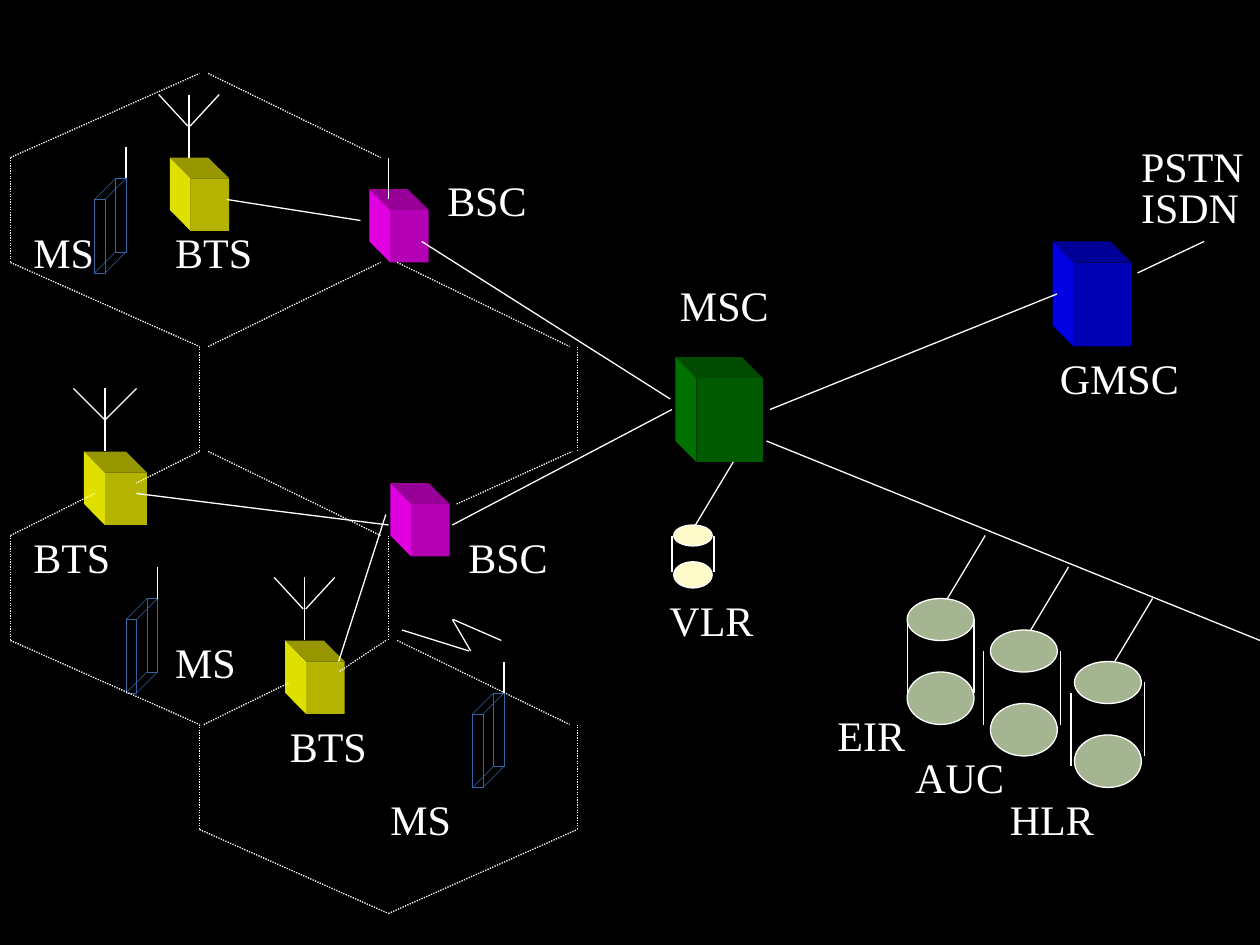
from lxml.etree import SubElement
from pptx import Presentation
from pptx.dml.color import RGBColor
from pptx.enum.dml import MSO_LINE
from pptx.enum.shapes import MSO_CONNECTOR, MSO_SHAPE
from pptx.oxml.ns import qn
from pptx.util import Pt

COLORS = {
    "background": "000000", "white": "FFFFFF", "wire": "3465A4",
    "register": "A5B592", "visitor": "FEFAC9",
}
CUBE_COLORS = {
    "MSC": ("005A00", "007000", "004B00"),
    "GMSC": ("0000B4", "0000E0", "000096"),
    "BSC": ("B400B4", "E000E0", "960096"),
    "BTS": ("B4B400", "E0E000", "969600"),
}
DEPTH = 12

presentation = Presentation()
presentation.slide_width = Pt(720)
presentation.slide_height = Pt(540)
slide = presentation.slides.add_slide(presentation.slide_layouts[6])
slide.background.fill.solid()
slide.background.fill.fore_color.rgb = RGBColor.from_string(COLORS["background"])


def add_line(x1, y1, x2, y2, dotted=False, color="white", width=0.75):
    connector = slide.shapes.add_connector(
        MSO_CONNECTOR.STRAIGHT, Pt(x1), Pt(y1), Pt(x2), Pt(y2))
    connector.line.color.rgb = RGBColor.from_string(COLORS[color])
    connector.line.width = Pt(width)
    if dotted:
        connector.line.dash_style = MSO_LINE.ROUND_DOT
    SubElement(connector._element.spPr, qn("a:effectLst"))


def paint(shape, fill=None, line=None, width=0.75):
    shape.shadow.inherit = False
    if fill:
        shape.fill.solid()
        shape.fill.fore_color.rgb = RGBColor.from_string(fill)
    else:
        shape.fill.background()
    if line:
        shape.line.color.rgb = RGBColor.from_string(line)
        shape.line.width = Pt(width)
    else:
        shape.line.fill.background()


cubes = [
    ("MSC", 398, 216, 38, 48),
    ("GMSC", 613.5, 150, 33, 48),
    ("BSC", 223, 120, 22, 30),
    ("BTS", 109, 102, 22, 30),
    ("BSC", 235, 288, 22, 30),
    ("BTS", 175, 378, 22, 30),
    ("BTS", 60, 270, 24, 30),
]
for kind, x, y, width, height in cubes:
    front_color, side_color, top_color = CUBE_COLORS[kind]
    front = slide.shapes.add_shape(
        MSO_SHAPE.RECTANGLE, Pt(x), Pt(y), Pt(width), Pt(height))
    paint(front, front_color)
    back_x, back_y = x - DEPTH, y - DEPTH
    side = [(x, y), (back_x, back_y), (back_x, back_y + height), (x, y + height)]
    top = [(x, y), (back_x, back_y), (back_x + width, back_y), (x + width, y)]
    for corners, color in ((side, side_color), (top, top_color)):
        points = [(Pt(px), Pt(py)) for px, py in corners]
        builder = slide.shapes.build_freeform(*points[0])
        builder.add_line_segments(points[1:], close=True)
        paint(builder.convert_to_shape(), color)

registers = [
    (518.4, 342, (518.4, 354), (556.5, 354)),
    (566, 360, (561.9, 372), (606, 372)),
    (614, 378, (612, 396), (654, 390)),
]
for x, y, left_side, right_side in registers:
    for top, height in ((y, 24), (y + 42, 30)):
        disc = slide.shapes.add_shape(
            MSO_SHAPE.OVAL, Pt(x), Pt(top), Pt(38.2), Pt(height))
        paint(disc, COLORS["register"], COLORS["white"])
    for side_x, side_y in (left_side, right_side):
        add_line(side_x, side_y, side_x, side_y + 42)
    add_line(x + 44.6, y - 36, x + 23, y)

for top, height in ((300, 12), (321, 15)):
    disc = slide.shapes.add_shape(
        MSO_SHAPE.OVAL, Pt(385), Pt(top), Pt(22), Pt(height))
    paint(disc, COLORS["visitor"], COLORS["white"])
for side_x in (384, 408):
    add_line(side_x, 306, side_x, 327)

for x, y in ((54, 114), (72, 354), (270, 408)):
    for offset in (0, DEPTH):
        face = slide.shapes.add_shape(
            MSO_SHAPE.RECTANGLE, Pt(x + offset), Pt(y - offset), Pt(6), Pt(42))
        paint(face, line=COLORS["wire"], width=0.25)
    for corner_x in (x, x + 6):
        for corner_y in (y, y + 42):
            add_line(corner_x, corner_y, corner_x + DEPTH, corner_y - DEPTH,
                     color="wire", width=0.25)
    add_line(x + 18, y - 30, x + 18, y - 12)

for x, y, gap, spread in ((108, 54, 0.7, 17.3), (60, 222, 0, 18), (174, 330, 0.7, 17.3)):
    add_line(x, y, x, y + 36)
    for direction in (-1, 1):
        add_line(x + direction * gap, y + 18, x + direction * spread, y)

cell_borders = [
    (6, 90, 6, 150), (6, 90, 114, 42), (119, 42, 217.5, 90),
    (6, 150, 114, 198), (119, 198, 217.5, 150), (227, 150, 325.5, 198),
    (114, 198, 114, 258), (330, 198, 330, 258), (261, 288, 327, 258),
    (114, 258, 78, 276), (6, 306, 54, 282), (119, 258, 217.5, 306),
    (6, 306, 6, 366), (222, 306, 222, 366), (6, 366, 114, 414),
    (116.5, 414, 165.5, 390), (220.5, 366, 193.5, 384), (227, 366, 325.5, 414),
    (114, 414, 114, 474), (330, 414, 330, 474),
    (114, 474, 222, 522), (222, 522, 330, 474),
]
for border in cell_borders:
    add_line(*border, dotted=True)

links = [
    (222, 90, 222, 114),
    (440, 234, 604, 168),
    (384, 234, 258.5, 300),
    (241, 138, 383, 228),
    (206, 126, 129.6, 114),
    (220.5, 294, 193.5, 378),
    (78, 282, 222, 300),
    (438, 252, 720, 366),
    (419, 264, 397.4, 300),
    (650, 156, 688, 138),
    (286.5, 366, 259, 354),
    (258.5, 354, 269, 372),
    (268, 372, 229.7, 360),
]
for link in links:
    add_line(*link)

labels = [
    ("BSC", 248.5, 96, 64), ("BSC", 260.5, 300, 74), ("MSC", 381.5, 156, 66),
    ("MS", 216, 450, 66), ("MS", 93, 360, 60), ("MS", 12, 126, 66),
    ("BTS", 93, 126, 73), ("BTS", 12, 300, 60), ("BTS", 158.5, 408, 71),
    ("GMSC", 598.5, 198, 87), ("PSTN\nISDN", 645, 76.5, 78),
    ("EIR", 471.5, 402, 66), ("AUC", 516, 426, 72), ("HLR", 570, 450, 72),
    ("VLR", 375.5, 336, 66),
]
for text, x, y, width in labels:
    lines = text.split("\n")
    box = slide.shapes.add_textbox(Pt(x), Pt(y), Pt(width), Pt(36 * len(lines)))
    box.text_frame.word_wrap = True
    box.text_frame.text = text
    for paragraph in box.text_frame.paragraphs:
        for run in paragraph.runs:
            run.font.name = "Times New Roman"
            run.font.size = Pt(24)
            run.font.color.rgb = RGBColor.from_string(COLORS["white"])
    for paragraph in box.text_frame.paragraphs[1:]:
        paragraph.line_spacing = Pt(23.5)

presentation.save("out.pptx")
